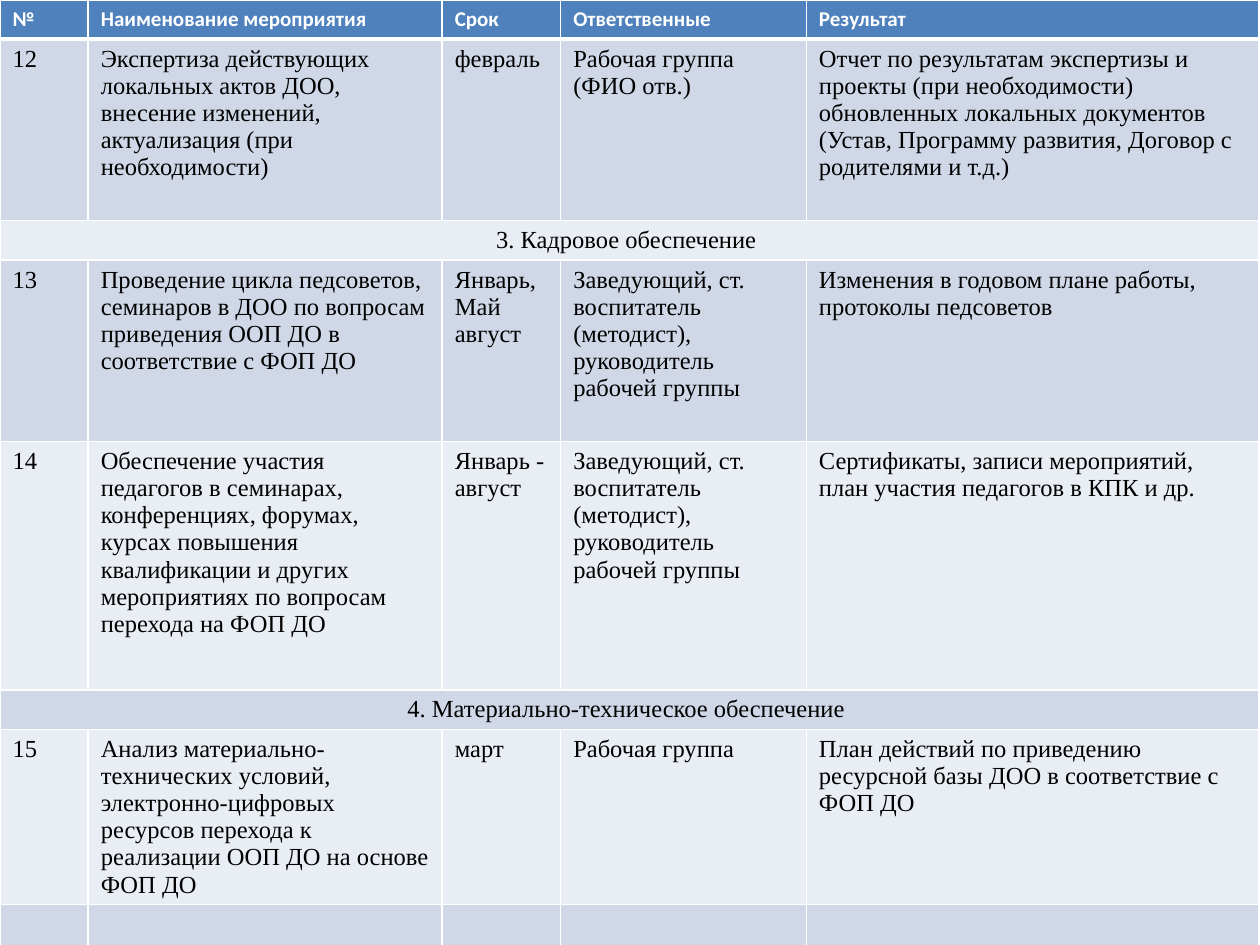
from lxml import etree
from pptx import Presentation
from pptx.dml.color import RGBColor
from pptx.enum.text import PP_ALIGN
from pptx.oxml.ns import qn
from pptx.util import Inches, Pt

HEADER = ["№", "Наименование мероприятия", "Срок", "Ответственные", "Результат"]
TEAM = "Заведующий, ст. воспитатель (методист), руководитель рабочей группы"

# Row height in inches, then cell texts; a single text spans the whole row
ROWS = [
    (0.31, HEADER),
    (1.44, ["12",
            "Экспертиза действующих локальных актов ДОО, внесение изменений, "
            "актуализация (при необходимости)",
            "февраль",
            "Рабочая группа (ФИО отв.)",
            "Отчет по результатам экспертизы и проекты (при необходимости) "
            "обновленных локальных документов (Устав, Программу развития, "
            "Договор с родителями и т.д.)"]),
    (0.28, ["3. Кадровое обеспечение "]),
    (1.44, ["13",
            "Проведение цикла педсоветов, семинаров в ДОО по вопросам "
            "приведения ООП ДО в соответствие с ФОП ДО",
            "Январь, Май август",
            TEAM,
            "Изменения в годовом плане работы, протоколы педсоветов"]),
    (1.97, ["14",
            "Обеспечение участия педагогов в семинарах, конференциях, форумах, "
            "курсах повышения квалификации и других мероприятиях по вопросам "
            "перехода на ФОП ДО",
            "Январь - август",
            TEAM,
            "Сертификаты, записи мероприятий, план участия педагогов в КПК и др."]),
    (0.31, ["4. Материально-техническое обеспечение "]),
    (0.46, ["15",
            "Анализ материально-технических условий, электронно-цифровых "
            "ресурсов перехода к реализации ООП ДО на основе ФОП ДО",
            "март",
            "Рабочая группа",
            "План действий по приведению ресурсной базы ДОО в соответствие с ФОП ДО"]),
    (0.46, [""] * len(HEADER)),
]
COLUMN_WIDTHS = [0.7, 2.81, 0.94, 1.95, 3.59]
TABLE_HEIGHT = 7.8
HEADER_FILL, BAND_FILLS = "4F81BD", ("E9EDF4", "D0D8E8")
WHITE, BLACK = "FFFFFF", "000000"


def color(value):
    return RGBColor.from_string(value)


def set_borders(cell, widths):
    """Draw white lines; widths maps side letters L, R, T, B to points."""
    properties = cell._tc.get_or_add_tcPr()
    for side, width in widths.items():
        line = etree.SubElement(properties, qn(f"a:ln{side}"), w=str(Pt(width)))
        fill = etree.SubElement(line, qn("a:solidFill"))
        etree.SubElement(fill, qn("a:srgbClr"), val=WHITE)


def style_cell(cell, row_index):
    is_header = row_index == 0
    set_borders(cell, {"L": 1, "R": 1, "T": 3 if row_index == 1 else 1,
                       "B": 3 if is_header else 1})
    cell.fill.solid()
    cell.fill.fore_color.rgb = color(HEADER_FILL if is_header else BAND_FILLS[row_index % 2])
    font = cell.text_frame.paragraphs[0].font
    font.name = "Calibri" if is_header else "Times New Roman"
    font.size = Pt(12 if is_header else 14)
    font.bold = is_header
    font.color.rgb = color(WHITE if is_header else BLACK)


def main():
    presentation = Presentation()
    presentation.slide_width, presentation.slide_height = Inches(10), Inches(7.5)
    slide = presentation.slides.add_slide(presentation.slide_layouts[6])
    frame = slide.shapes.add_table(len(ROWS), len(HEADER), 0, 0,
                                   Inches(10), Inches(TABLE_HEIGHT))
    table = frame.table
    for column, width in zip(table.columns, COLUMN_WIDTHS):
        column.width = Inches(width)

    for row_index, (height, texts) in enumerate(ROWS):
        table.rows[row_index].height = Inches(height)
        cells = list(table.rows[row_index].cells)
        for cell, text in zip(cells, texts):
            if text:
                cell.text = text
        for cell in cells:
            style_cell(cell, row_index)
        if len(texts) == 1:
            cells[0].merge(cells[-1])
            cells[0].text_frame.paragraphs[0].alignment = PP_ALIGN.CENTER

    frame.width, frame.height = Inches(10), Inches(TABLE_HEIGHT)
    presentation.save("out.pptx")


if __name__ == "__main__":
    main()
